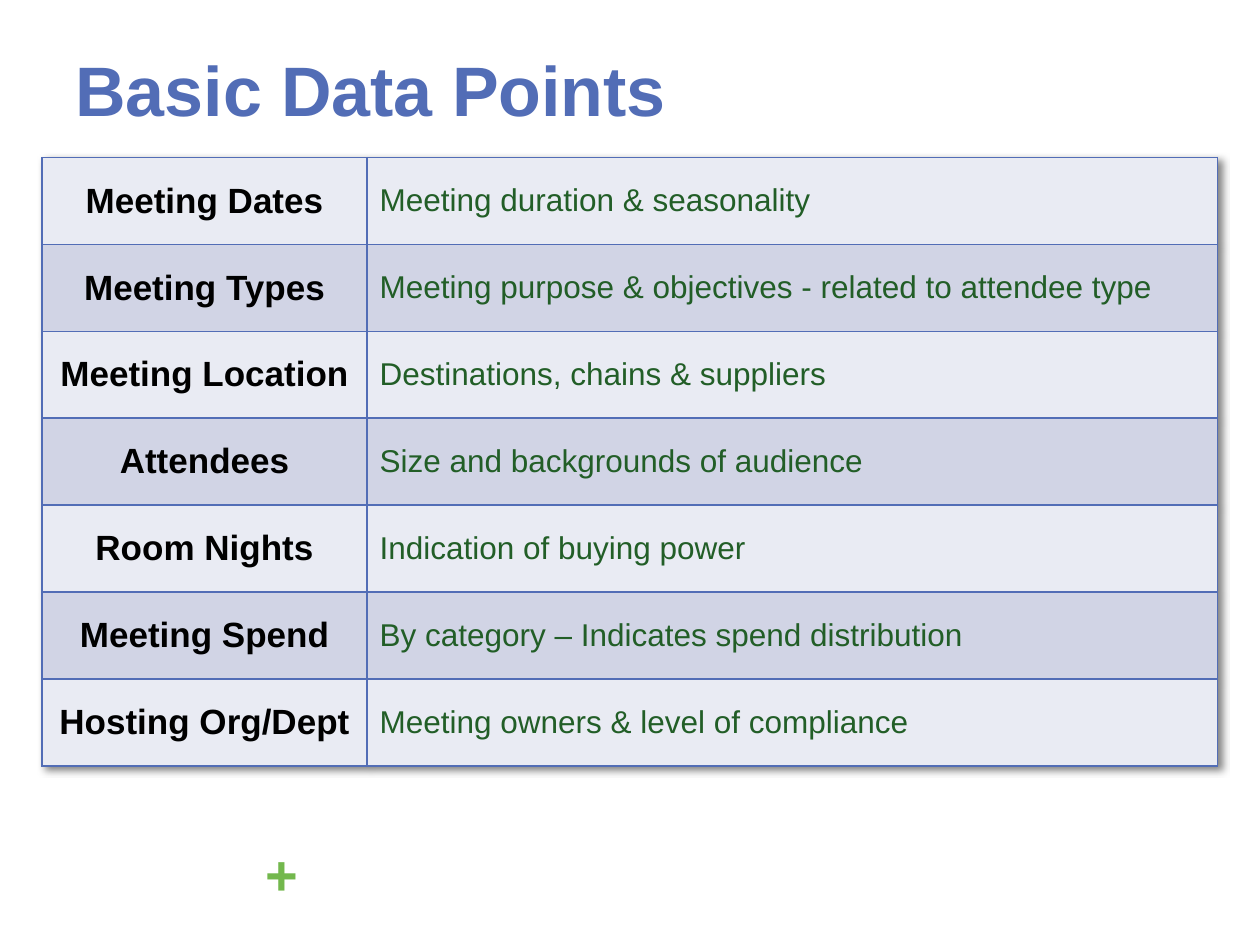
from lxml import etree
from pptx import Presentation
from pptx.dml.color import RGBColor
from pptx.enum.text import MSO_ANCHOR, PP_ALIGN
from pptx.oxml.ns import qn
from pptx.util import Inches, Pt

MIDDLE = MSO_ANCHOR.MIDDLE
LEFT, CENTER = PP_ALIGN.LEFT, PP_ALIGN.CENTER

# Content
TITLE = "Basic Data Points"
MARK = "+"
DATA_POINTS = [
    ("Meeting Dates", "Meeting duration & seasonality"),
    ("Meeting Types", "Meeting purpose & objectives - related to attendee type"),
    ("Meeting Location", "Destinations, chains & suppliers"),
    ("Attendees", "Size and backgrounds of audience"),
    ("Room Nights", "Indication of buying power"),
    ("Meeting Spend", "By category – Indicates spend distribution"),
    ("Hosting Org/Dept", "Meeting owners & level of compliance"),
]

# Style
FONT = "Arial"
COLORS = {
    "blue": "526DB6", "lime": "73B84D", "label": "000000",
    "detail": "225E27", "light": "E9EBF3", "dark": "D1D4E5",
}
BANDS = ("light", "dark")
# One entry per column: size, colour, bold, alignment
COLUMN_STYLES = [(20, "label", True, CENTER), (18, "detail", False, LEFT)]

# Layout in inches
WIDTH, HEIGHT = 10, 7.5
TABLE_LEFT, TABLE_TOP = WIDTH / 30, HEIGHT / 6
COLUMN_WIDTHS = (2.58, 6.75)
ROW_HEIGHT = 0.69


def write(frame, text, size, color, bold, align=LEFT):
    paragraph = frame.paragraphs[0]
    paragraph.alignment = align
    run = paragraph.add_run()
    run.text = text
    run.font.name = FONT
    run.font.size = Pt(size)
    run.font.bold = bold
    run.font.color.rgb = RGBColor.from_string(COLORS[color])


def add_text(slide, box, text, size, color, align=LEFT, wrap=True):
    frame = slide.shapes.add_textbox(*map(Inches, box)).text_frame
    frame.word_wrap = wrap
    frame.vertical_anchor = MIDDLE
    write(frame, text, size, color, True, align)


def add_color(parent, color):
    fill = etree.SubElement(parent, qn("a:solidFill"))
    return etree.SubElement(fill, qn("a:srgbClr"), val=color)


def set_borders(cell, color, points):
    properties = cell._tc.get_or_add_tcPr()
    for side in ("lnL", "lnR", "lnT", "lnB"):
        line = etree.SubElement(properties, qn(f"a:{side}"), w=str(Pt(points)))
        add_color(line, color)


def add_table_shadow(table):
    effects = etree.Element(qn("a:effectLst"))
    shadow = etree.SubElement(
        effects, qn("a:outerShdw"), blurRad=str(Pt(4)), dist=str(Pt(3)),
        dir="2700000", algn="tl", rotWithShape="0")
    color = etree.SubElement(shadow, qn("a:srgbClr"), val="000000")
    etree.SubElement(color, qn("a:alpha"), val="50000")
    table._tbl.tblPr.insert(0, effects)


def add_data_table(slide):
    table = slide.shapes.add_table(
        len(DATA_POINTS), len(COLUMN_WIDTHS),
        Inches(TABLE_LEFT), Inches(TABLE_TOP),
        Inches(sum(COLUMN_WIDTHS)), Inches(ROW_HEIGHT * len(DATA_POINTS))).table
    table.first_row = table.horz_banding = False
    add_table_shadow(table)
    for column, width in zip(table.columns, COLUMN_WIDTHS):
        column.width = Inches(width)
    for index, texts in enumerate(DATA_POINTS):
        table.rows[index].height = Inches(ROW_HEIGHT)
        band = COLORS[BANDS[index % len(BANDS)]]
        for cell, text, style in zip(table.rows[index].cells, texts, COLUMN_STYLES):
            set_borders(cell, COLORS["blue"], 1)
            cell.fill.solid()
            cell.fill.fore_color.rgb = RGBColor.from_string(band)
            cell.vertical_anchor = MIDDLE
            write(cell.text_frame, text, *style)


def main():
    presentation = Presentation()
    presentation.slide_width = Inches(WIDTH)
    presentation.slide_height = Inches(HEIGHT)
    slide = presentation.slides.add_slide(presentation.slide_layouts[6])

    # Footer mark, title, table
    add_text(slide, (2.01, 6.61, 0.46, 0.64), MARK, 32, "lime", CENTER, wrap=False)
    add_text(slide, (0.5, 0.33, WIDTH - 1, 0.75), TITLE, 40, "blue")
    add_data_table(slide)
    presentation.save("out.pptx")


if __name__ == "__main__":
    main()
